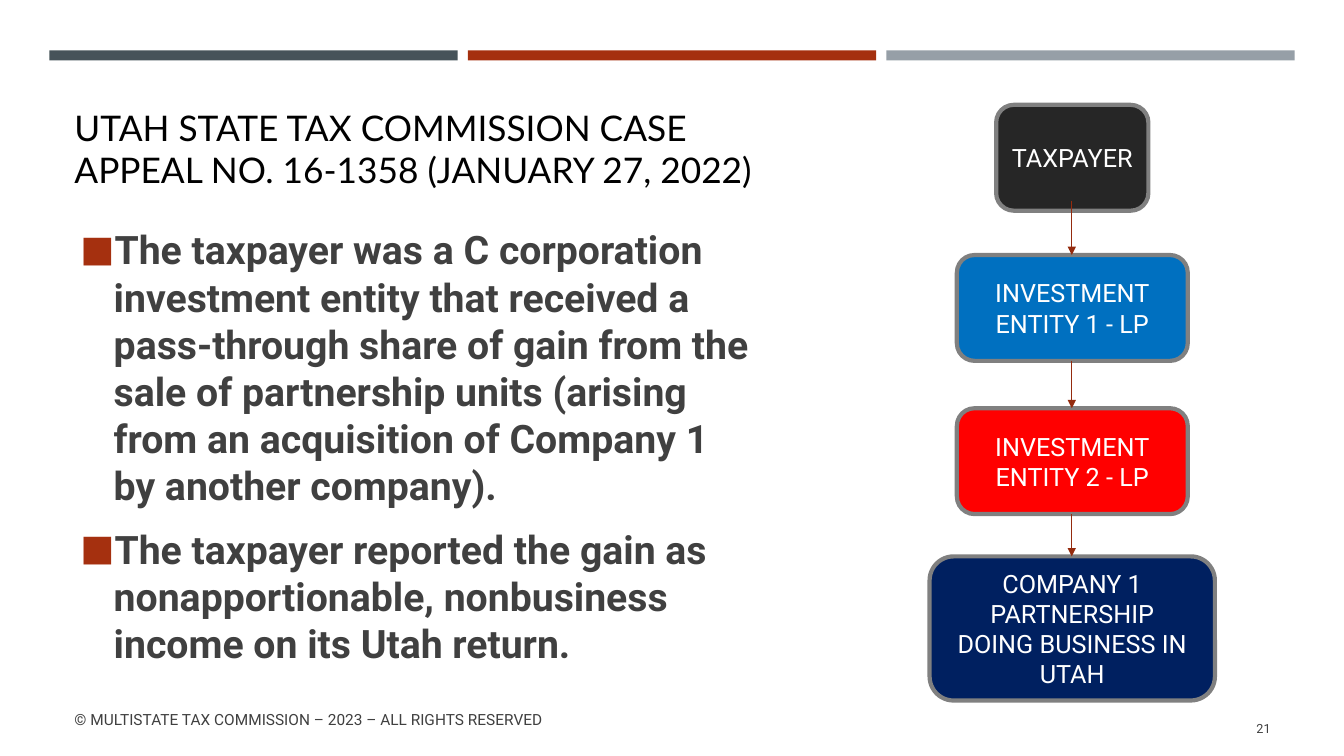
"""Build the Utah State Tax Commission case slide with its ownership chain."""
from lxml import etree
from pptx import Presentation
from pptx.dml.color import RGBColor
from pptx.enum.shapes import MSO_CONNECTOR, MSO_SHAPE
from pptx.enum.text import MSO_ANCHOR, PP_ALIGN
from pptx.oxml.ns import qn
from pptx.util import Emu, Pt

RECTANGLE = MSO_SHAPE.RECTANGLE
ENTITY_BOX = MSO_SHAPE.FLOWCHART_ALTERNATE_PROCESS
STRAIGHT = MSO_CONNECTOR.STRAIGHT
TOP, MIDDLE, BOTTOM = MSO_ANCHOR.TOP, MSO_ANCHOR.MIDDLE, MSO_ANCHOR.BOTTOM
LEFT, CENTER, RIGHT = PP_ALIGN.LEFT, PP_ALIGN.CENTER, PP_ALIGN.RIGHT
PX = 9144


class Theme:
    heading_font, body_font = "Lato", "Roboto"
    title_size, bullet_size, entity_size = 25.2, 28, 18
    footer_size, number_size = 11, 9
    slate, rust, silver = "465359", "A5300F", "969FA7"
    title, text, entity_text = "000000", "404040", "FFFFFF"
    taxpayer, entity_1, entity_2, company = "262626", "0070C0", "FF0000", "002060"
    border, arrow = "808080", "942B0E"


def px(*lengths):
    return [Emu(length * PX) for length in lengths]


def write(frame, lines, font, size, color, anchor=MIDDLE, align=LEFT,
          bold=False, inset=(10, 5)):
    frame.word_wrap = True
    frame.vertical_anchor = anchor
    side, edge = px(*inset)
    frame.margin_left = frame.margin_right = side
    frame.margin_top = frame.margin_bottom = edge
    for index, line in enumerate(lines):
        paragraph = frame.paragraphs[0] if index == 0 else frame.add_paragraph()
        paragraph.alignment = align
        run = paragraph.add_run()
        run.text = line
        run.font.name = font
        run.font.size = Pt(size)
        run.font.bold = bold
        run.font.color.rgb = RGBColor.from_string(color)


deck = Presentation()
deck.slide_width, deck.slide_height = px(1333, 750)
slide = deck.slides.add_slide(deck.slide_layouts[6])
shapes = slide.shapes

for column, color in enumerate((Theme.slate, Theme.rust, Theme.silver)):
    bar = shapes.add_shape(RECTANGLE, *px(49 + column * 415, 50, 405, 10))
    bar.shadow.inherit = False
    bar.fill.solid()
    bar.fill.fore_color.rgb = RGBColor.from_string(color)
    bar.line.fill.background()

title = shapes.add_textbox(*px(64, 114, 1206, 80))
write(title.text_frame,
      ["UTAH STATE TAX COMMISSION CASE", "APPEAL NO. 16-1358 (JANUARY 27, 2022)"],
      Theme.heading_font, Theme.title_size, Theme.title, anchor=BOTTOM)

case_facts = shapes.add_textbox(*px(70, 224, 683, 480))
write(case_facts.text_frame, [
    "The taxpayer was a C corporation investment entity that received a "
    "pass-through share of gain from the sale of partnership units (arising "
    "from an acquisition of Company 1 by another company).",
    "The taxpayer reported the gain as nonapportionable, nonbusiness income "
    "on its Utah return.",
], Theme.body_font, Theme.bullet_size, Theme.text, anchor=TOP, bold=True, inset=(10, 0))
for fact in case_facts.text_frame.paragraphs:
    fact.space_after = Pt(12)
    properties = fact._p.get_or_add_pPr()
    properties.set("marL", str(33 * PX))
    properties.set("indent", str(-33 * PX))
    bullet_color = etree.SubElement(properties, qn("a:buClr"))
    etree.SubElement(bullet_color, qn("a:srgbClr"), val=Theme.rust)
    etree.SubElement(properties, qn("a:buSzPct"), val="92000")
    etree.SubElement(properties, qn("a:buFont"), typeface=Theme.body_font)
    etree.SubElement(properties, qn("a:buChar"), char="■")

footer = shapes.add_textbox(*px(64, 703, 756, 40))
write(footer.text_frame, ["© MULTISTATE TAX COMMISSION – 2023 – ALL RIGHTS RESERVED"],
      Theme.body_font, Theme.footer_size, Theme.text, anchor=TOP, inset=(10, 2))

page_number = shapes.add_textbox(*px(1155, 703, 115, 40))
write(page_number.text_frame, ["21"], Theme.body_font, Theme.number_size,
      Theme.text, align=RIGHT)

chain_center = 1063
ownership_chain = [
    (104, 151, 105, Theme.taxpayer, ["TAXPAYER"]),
    (253, 229, 105, Theme.entity_1, ["INVESTMENT", "ENTITY 1 - LP"]),
    (405, 229, 105, Theme.entity_2, ["INVESTMENT", "ENTITY 2 - LP"]),
    (552, 283, 143, Theme.company,
     ["COMPANY 1", "PARTNERSHIP", "DOING BUSINESS IN UTAH"]),
]
for top, width, height, color, label in ownership_chain:
    entity = shapes.add_shape(
        ENTITY_BOX, *px(chain_center - width // 2, top, width, height))
    entity.shadow.inherit = False
    entity.fill.solid()
    entity.fill.fore_color.rgb = RGBColor.from_string(color)
    entity.line.color.rgb = RGBColor.from_string(Theme.border)
    entity.line.width = Pt(3)
    write(entity.text_frame, label, Theme.body_font, Theme.entity_size,
          Theme.entity_text, align=CENTER, inset=(5, 5))

for start, end in ((199, 253), (358, 405), (510, 552)):
    arrow = shapes.add_connector(STRAIGHT, *px(chain_center, start, chain_center, end))
    arrow.line.color.rgb = RGBColor.from_string(Theme.arrow)
    arrow.line.width = Pt(1)
    etree.SubElement(arrow.line._get_or_add_ln(), qn("a:tailEnd"), type="triangle")
    etree.SubElement(arrow._element.spPr, qn("a:effectLst"))

deck.save("out.pptx")
